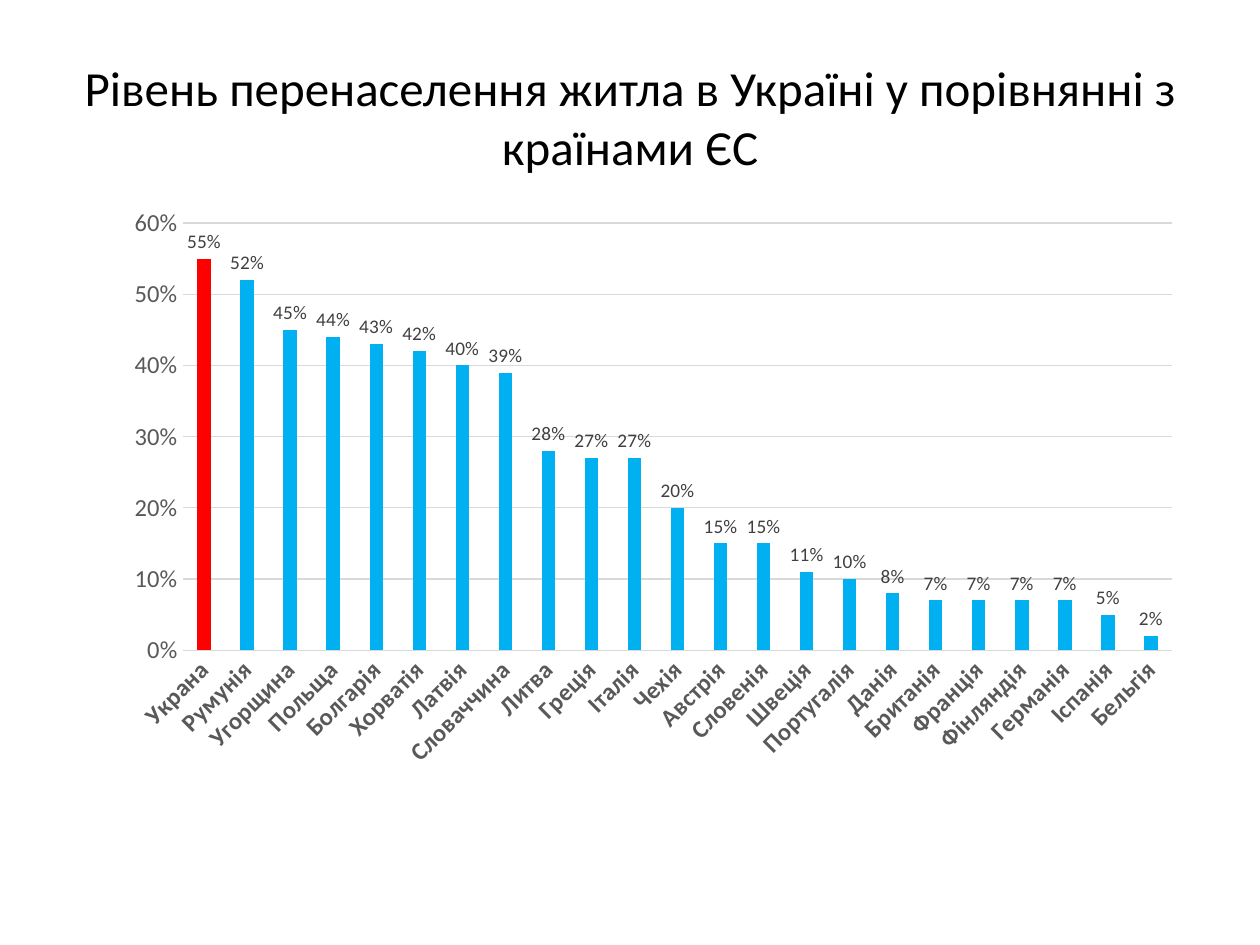
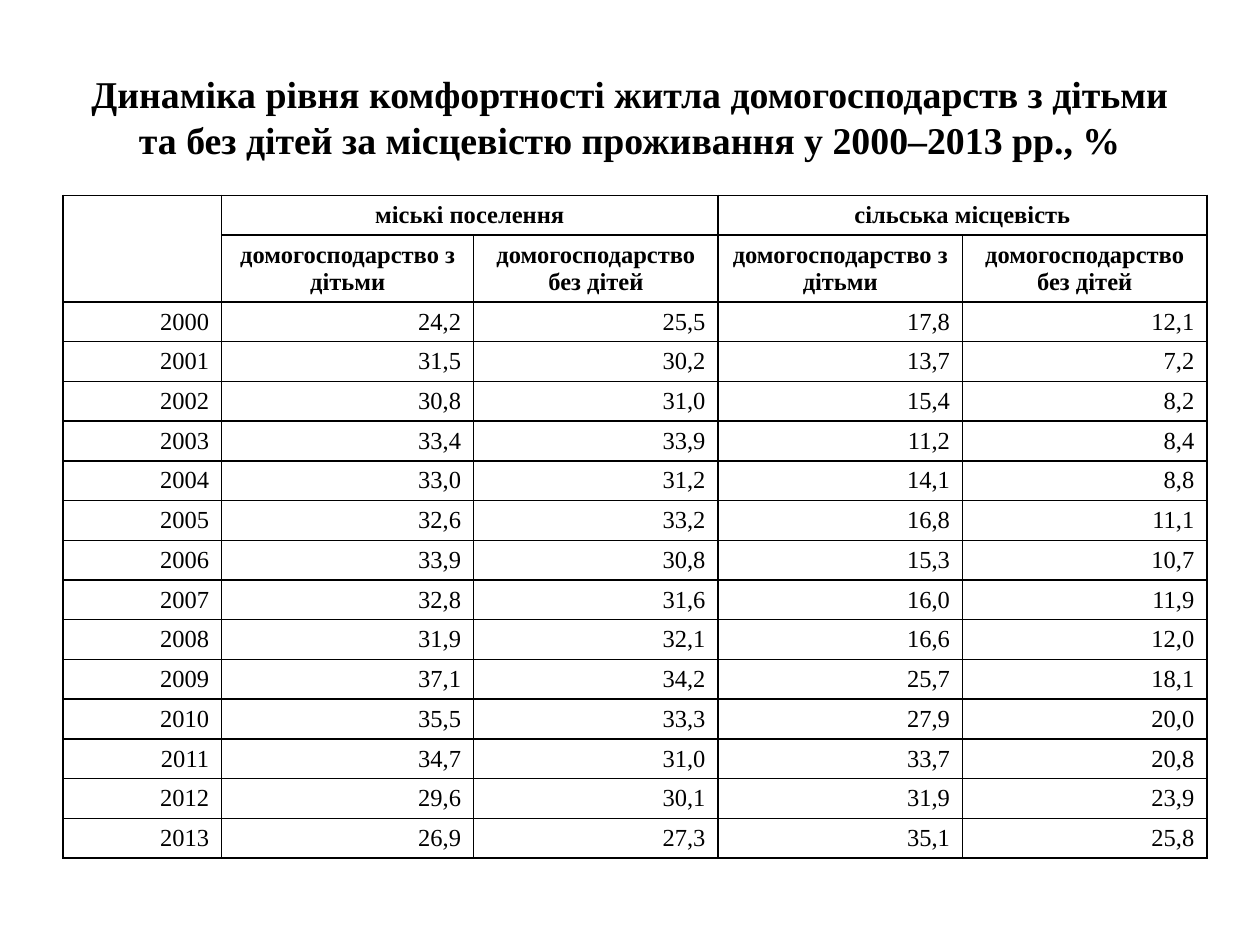
from lxml import etree
from pptx import Presentation
from pptx.chart.data import CategoryChartData
from pptx.dml.color import RGBColor
from pptx.enum.chart import XL_CHART_TYPE as ChartType
from pptx.enum.chart import XL_LABEL_POSITION as LabelPosition
from pptx.enum.chart import XL_TICK_MARK as TickMark
from pptx.enum.text import MSO_ANCHOR as Anchor
from pptx.enum.text import MSO_AUTO_SIZE as AutoSize
from pptx.enum.text import PP_ALIGN as Align
from pptx.oxml import parse_xml
from pptx.oxml.ns import nsdecls, qn
from pptx.util import Inches, Pt

COLORS = {
    "text": "000000",
    "axis": "595959",
    "label": "404040",
    "grid": "D9D9D9",
    "bar": "00B0F0",
    "ukraine": "FF0000",
}
SANS, SERIF = "Calibri", "Times New Roman"
TITLE_ONLY = 5

OVERCROWDING = {
    "Украна": 0.55, "Румунія": 0.52, "Угорщина": 0.45, "Польща": 0.44,
    "Болгарія": 0.43, "Хорватія": 0.42, "Латвія": 0.4, "Словаччина": 0.39,
    "Литва": 0.28, "Греція": 0.27, "Італія": 0.27, "Чехія": 0.2,
    "Австрія": 0.15, "Словенія": 0.15, "Швеція": 0.11, "Португалія": 0.1,
    "Данія": 0.08, "Британія": 0.07, "Франція": 0.07, "Фінляндія": 0.07,
    "Германія": 0.07, "Іспанія": 0.05, "Бельгія": 0.02,
}

SETTLEMENTS = ["міські поселення", "сільська місцевість"]
HOUSEHOLDS = ["домогосподарство з дітьми", "домогосподарство без дітей"]
COMFORT = [
    "2000 24,2 25,5 17,8 12,1",
    "2001 31,5 30,2 13,7 7,2",
    "2002 30,8 31,0 15,4 8,2",
    "2003 33,4 33,9 11,2 8,4",
    "2004 33,0 31,2 14,1 8,8",
    "2005 32,6 33,2 16,8 11,1",
    "2006 33,9 30,8 15,3 10,7",
    "2007 32,8 31,6 16,0 11,9",
    "2008 31,9 32,1 16,6 12,0",
    "2009 37,1 34,2 25,7 18,1",
    "2010 35,5 33,3 27,9 20,0",
    "2011 34,7 31,0 33,7 20,8",
    "2012 29,6 30,1 31,9 23,9",
    "2013 26,9 27,3 35,1 25,8",
]


def color(name):
    return RGBColor.from_string(COLORS[name])


def set_font(font, name, size, color_name="text", bold=False):
    font.name, font.size, font.bold = name, Pt(size), bold
    font.color.rgb = color(color_name)


def set_line(line, color_name, width):
    line.color.rgb = color(color_name)
    line.width = Pt(width)


def fill_solid(target, color_name):
    target.format.fill.solid()
    target.format.fill.fore_color.rgb = color(color_name)


def border_cell(cell, width=1):
    properties = cell._tc.get_or_add_tcPr()
    for index, side in enumerate(("lnL", "lnR", "lnT", "lnB")):
        properties.insert(index, parse_xml(
            f'<a:{side} {nsdecls("a")} w="{Pt(width)}"><a:solidFill>'
            f'<a:srgbClr val="{COLORS["text"]}"/></a:solidFill></a:{side}>'))


def place_plot(chart, **bounds):
    """Fix the inner plot area as fractions of the chart."""
    plot_area = chart._chartSpace.chart.plotArea
    for old in plot_area.findall(qn("c:layout")):
        plot_area.remove(old)
    layout = etree.Element(qn("c:layout"))
    manual = etree.SubElement(layout, qn("c:manualLayout"))
    settings = {"layoutTarget": "inner", "xMode": "edge", "yMode": "edge", **bounds}
    for tag, value in settings.items():
        etree.SubElement(manual, qn(f"c:{tag}")).set("val", str(value))
    plot_area.insert(0, layout)


class SlideBuilder:
    def __init__(self):
        self.deck = Presentation()
        self.deck.slide_width, self.deck.slide_height = Inches(10), Inches(7.5)
        self.page = None

    def add_page(self, title, font_name, size, bold=False):
        self.page = self.deck.slides.add_slide(self.deck.slide_layouts[TITLE_ONLY])
        box = self.page.shapes.title
        box.left, box.top = Inches(0.5), Inches(0.3)
        box.width, box.height = Inches(9), Inches(1.25)
        frame = box.text_frame
        frame.text = title
        frame.word_wrap, frame.auto_size = True, AutoSize.NONE
        frame.vertical_anchor = Anchor.MIDDLE
        para = frame.paragraphs[0]
        para.alignment = Align.CENTER
        set_font(para.font, font_name, size, bold=bold)

    def add_column_chart(self, values, left, top, width, height):
        data = CategoryChartData(number_format="0%")
        data.categories = list(values)
        data.add_series("Series 1", list(values.values()))
        chart = self.page.shapes.add_chart(
            ChartType.COLUMN_CLUSTERED, Inches(left), Inches(top),
            Inches(width), Inches(height), data).chart
        chart.has_legend = chart.has_title = False
        set_font(chart.font, SANS, 10)
        place_plot(chart, x=0.064, y=0.033, w=0.932, h=0.742)
        self.style_axes(chart)

        plot = chart.plots[0]
        plot.gap_width, plot.overlap, plot.vary_by_categories = 219, -27, False
        series = plot.series[0]
        fill_solid(series, "bar")
        fill_solid(series.points[0], "ukraine")
        labels = series.data_labels
        labels.show_value = True
        labels.position = LabelPosition.OUTSIDE_END
        labels.number_format, labels.number_format_is_linked = "0%", False
        set_font(labels.font, SANS, 11, "label")

    def style_axes(self, chart):
        countries, shares = chart.category_axis, chart.value_axis
        for axis in (countries, shares):
            axis.major_tick_mark = axis.minor_tick_mark = TickMark.NONE
            set_font(axis.tick_labels.font, SANS, 14, "axis", bold=axis is countries)
        set_line(countries.format.line, "grid", 0.75)
        countries._element.find(qn("c:txPr")).find(qn("a:bodyPr")).set("rot", "-2700000")
        shares.minimum_scale, shares.maximum_scale, shares.major_unit = 0, 0.6, 0.1
        shares.tick_labels.number_format = "0%"
        shares.tick_labels.number_format_is_linked = False
        shares.format.line.fill.background()
        set_line(shares.major_gridlines.format.line, "grid", 0.75)

    def add_table(self, rows, header_rows, left, top, widths, heights):
        table = self.page.shapes.add_table(
            len(rows), len(widths), Inches(left), Inches(top),
            Inches(sum(widths)), Inches(sum(heights))).table
        table.first_row = table.horz_banding = False
        for column, width in zip(table.columns, widths):
            column.width = Inches(width)
        for row_index, (row, height) in enumerate(zip(rows, heights)):
            table.rows[row_index].height = Inches(height)
            is_header = row_index < header_rows
            for column_index, text in enumerate(row):
                self.write_cell(table.cell(row_index, column_index), text, is_header)
        return table

    def write_cell(self, cell, text, is_header):
        cell.text = text
        cell.vertical_anchor = Anchor.BOTTOM
        cell.fill.background()
        border_cell(cell)
        para = cell.text_frame.paragraphs[0]
        para.alignment = Align.CENTER if is_header else Align.RIGHT
        set_font(para.font, SERIF, 14, bold=is_header)


def main():
    builder = SlideBuilder()

    builder.add_page("Рівень перенаселення житла в Україні у порівнянні з країнами ЄС",
                     SANS, 28)
    builder.add_column_chart(OVERCROWDING, 0.91, 1.62, 8.43, 4.57)

    builder.add_page("Динаміка рівня комфортності житла домогосподарств з дітьми "
                     "та без дітей за місцевістю проживання у 2000–2013 рр., %",
                     SERIF, 21.6, bold=True)
    urban, rural = SETTLEMENTS
    rows = [["", urban, "", rural, ""], ["", *HOUSEHOLDS * 2]]
    rows += [line.split() for line in COMFORT]
    table = builder.add_table(rows, 2, 0.5, 1.55, [1.26, 2] + [1.94] * 3,
                              [0.21, 0.35] + [0.21] * len(COMFORT))
    for first, last in (((0, 0), (1, 0)), ((0, 1), (0, 2)), ((0, 3), (0, 4))):
        table.cell(*first).merge(table.cell(*last))

    builder.deck.save("out.pptx")


if __name__ == "__main__":
    main()
